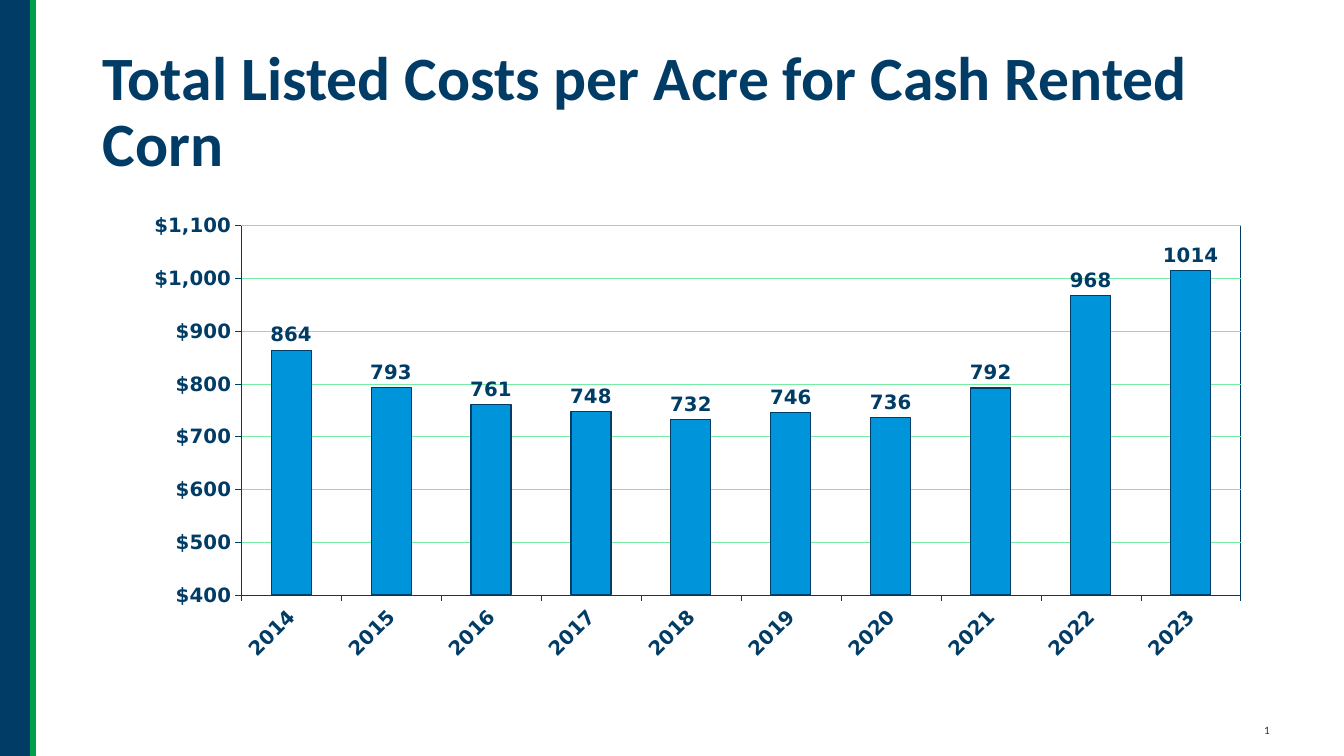
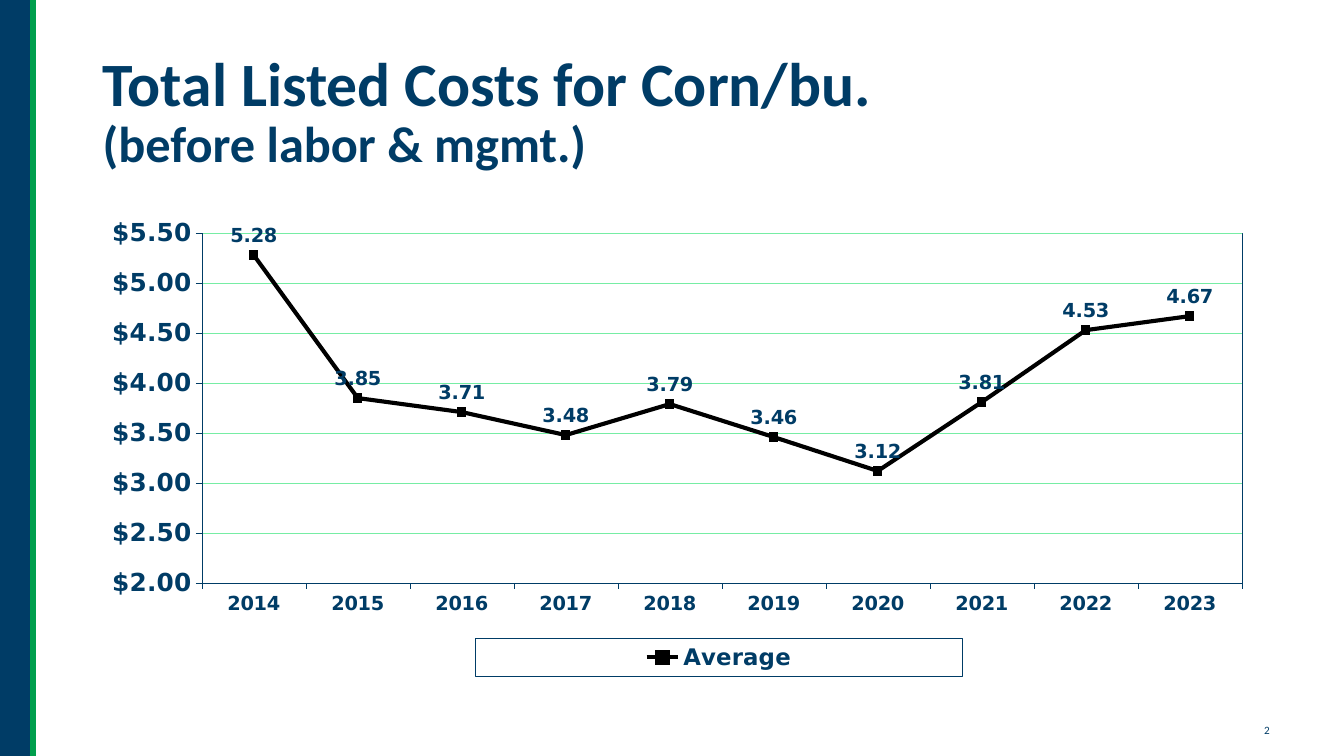
import pptx
import pptx.chart.data
import pptx.dml.color
import pptx.enum.chart
import pptx.enum.shapes
import pptx.enum.text
import pptx.oxml
import pptx.oxml.ns
import pptx.util

Inches = pptx.util.Inches
Pt = pptx.util.Pt
RGBColor = pptx.dml.color.RGBColor
ChartType = pptx.enum.chart.XL_CHART_TYPE
LabelPosition = pptx.enum.chart.XL_LABEL_POSITION
qn = pptx.oxml.ns.qn

# Shared style
NAVY = RGBColor(0x00, 0x3C, 0x66)
GREEN = RGBColor(0x00, 0x9F, 0x4D)
BLUE = RGBColor(0x00, 0x95, 0xDA)
MINT = RGBColor(0x76, 0xED, 0xA4)
BLACK = RGBColor(0, 0, 0)
TEXT_FONT = "Calibri"
CHART_FONT = "DejaVu Sans"
YEARS = [str(year) for year in range(2014, 2024)]


def format_font(font, size, name=CHART_FONT, color=NAVY, bold=True):
    font.name = name
    font.size = Pt(size)
    font.bold = bold
    font.color.rgb = color


def add_span(para, text, **style):
    span = para.add_run()
    span.text = text
    format_font(span.font, **style)
    return span


def format_line(line, color, width):
    line.color.rgb = color
    line.width = Pt(width)


def chart_xml(body):
    return pptx.oxml.parse_xml(body.replace(
        ">", f' {pptx.oxml.ns.nsdecls("c", "a")}>', 1))


def place(element, index, area, target=""):
    """Give a plot area or legend a fixed place, as fractions of the chart."""
    for old in element.findall(qn("c:layout")):
        element.remove(old)
    modes = "".join(f'<c:{side}Mode val="edge"/>' for side in "xy")
    sizes = "".join(f'<c:{side} val="{value}"/>' for side, value in zip("xywh", area))
    element.insert(index, chart_xml(
        f"<c:layout><c:manualLayout>{target}{modes}{sizes}</c:manualLayout></c:layout>"))


def outline(width):
    return chart_xml(
        f'<c:spPr><a:noFill/><a:ln w="{Pt(width)}"><a:solidFill>'
        f'<a:srgbClr val="{NAVY}"/></a:solidFill></a:ln></c:spPr>')


class Deck:
    def __init__(self):
        self.deck = pptx.Presentation()
        self.deck.slide_width = Inches(13.33)
        self.deck.slide_height = Inches(7.5)
        self.page = None

    def add_page(self, number, *title_lines):
        self.page = self.deck.slides.add_slide(self.deck.slide_layouts[6])
        self.add_band()
        self.add_title(title_lines)
        self.add_number(number)

    def add_band(self):
        band = self.page.shapes.add_shape(
            pptx.enum.shapes.MSO_SHAPE.RECTANGLE, 0, 0, Inches(0.33), Inches(7.5))
        band.shadow.inherit = False
        band.fill.solid()
        band.fill.fore_color.rgb = NAVY
        band.line.fill.background()
        edge = self.page.shapes.add_connector(
            pptx.enum.shapes.MSO_CONNECTOR.STRAIGHT,
            Inches(0.33), 0, Inches(0.33), Inches(7.5))
        format_line(edge.line, GREEN, 4.5)
        edge._element.spPr.append(pptx.oxml.parse_xml(
            f'<a:effectLst {pptx.oxml.ns.nsdecls("a")}/>'))

    def add_title(self, lines):
        box = self.page.shapes.add_textbox(
            Inches(0.92), Inches(0.4), Inches(11.5), Inches(1.45))
        box.text_frame.word_wrap = True
        box.text_frame.vertical_anchor = pptx.enum.text.MSO_ANCHOR.MIDDLE
        para = box.text_frame.paragraphs[0]
        para.line_spacing = 0.9
        for index, (text, size) in enumerate(lines):
            if index:
                para.add_line_break()
            add_span(para, text, size=size, name=TEXT_FONT)

    def add_number(self, number):
        box = self.page.shapes.add_textbox(
            Inches(12.44), Inches(7.13), Inches(0.34), Inches(0.24))
        box.text_frame.word_wrap = False
        para = box.text_frame.paragraphs[0]
        span = add_span(para, str(number), size=8, name=TEXT_FONT, bold=False)
        # Turn the run into a live slide number
        field = pptx.oxml.parse_xml(
            f'<a:fld {pptx.oxml.ns.nsdecls("a")} type="slidenum" '
            'id="{B6F15528-21DE-4FAA-801E-634DDDAF4B2B}"/>')
        span._r.addprevious(field)
        field.extend(list(span._r))
        para._p.remove(span._r)

    def add_chart(self, kind, name, values, plot_area, value_format, scale,
                  axis_size, label_size, label_position, thin):
        data = pptx.chart.data.CategoryChartData()
        data.categories = YEARS
        data.add_series(name, values)
        chart = self.page.shapes.add_chart(
            kind, Inches(0.92), Inches(2), Inches(11.5), Inches(4.76), data).chart
        chart.has_title = False
        chart.has_legend = False
        format_font(chart.font, axis_size)

        # Axes
        for axis, size in ((chart.category_axis, label_size),
                           (chart.value_axis, axis_size)):
            axis.major_tick_mark = pptx.enum.chart.XL_TICK_MARK.OUTSIDE
            axis.minor_tick_mark = pptx.enum.chart.XL_TICK_MARK.NONE
            format_font(axis.tick_labels.font, size)
            format_line(axis.format.line, NAVY, thin)
        axis = chart.value_axis
        axis.minimum_scale, axis.maximum_scale, axis.major_unit = scale
        axis.has_major_gridlines = True
        format_line(axis.major_gridlines.format.line, MINT, thin)
        axis.tick_labels.number_format = value_format
        axis.tick_labels.number_format_is_linked = False

        # Plot frame and value labels
        frame = chart._chartSpace.chart.plotArea
        place(frame, 0, plot_area, '<c:layoutTarget val="inner"/>')
        frame.append(outline(thin))
        plot = chart.plots[0]
        plot.vary_by_categories = False
        plot.has_data_labels = True
        plot.data_labels.show_value = True
        plot.data_labels.position = label_position
        format_font(plot.data_labels.font, label_size)
        return chart

    def add_legend(self, chart, area, size, thin):
        chart.has_legend = True
        legend = chart.legend
        legend.position = pptx.enum.chart.XL_LEGEND_POSITION.BOTTOM
        legend.include_in_layout = False
        format_font(legend.font, size)
        place(legend._element, 1, area)
        legend._element.find(qn("c:txPr")).addprevious(outline(thin))

    def save(self):
        self.deck.save("out.pptx")


def main():
    deck = Deck()

    # Cost per acre
    deck.add_page(7, ("Total Listed Costs per Acre for Cash Rented Corn", 44))
    chart = deck.add_chart(
        ChartType.COLUMN_CLUSTERED, "Series 1",
        [864, 793, 761, 748, 732, 746, 736, 792, 968, 1014],
        plot_area=(0.128, 0.05, 0.862, 0.77), value_format='"$"#,##0',
        scale=(400, 1100, 100), axis_size=14.1, label_size=14.1,
        label_position=LabelPosition.OUTSIDE_END, thin=0.2)
    chart.plots[0].gap_width = 150
    columns = chart.plots[0].series[0]
    columns.format.fill.solid()
    columns.format.fill.fore_color.rgb = BLUE
    format_line(columns.format.line, NAVY, 0.78)
    year_text = chart.category_axis._element.find(qn("c:txPr"))
    year_text.find(qn("a:bodyPr")).set("rot", str(-45 * 60000))

    # Cost per bushel
    deck.add_page(8, ("Total Listed Costs for Corn/bu. ", 44),
                  ("(before labor & mgmt.)", 36))
    chart = deck.add_chart(
        ChartType.LINE_MARKERS, "Average",
        [5.28, 3.85, 3.71, 3.48, 3.79, 3.46, 3.12, 3.81, 4.53, 4.67],
        plot_area=(0.094, 0.066, 0.897, 0.729), value_format='"$"#,##0.00',
        scale=(2, 5.5, 0.5), axis_size=17.7, label_size=13.8,
        label_position=LabelPosition.ABOVE, thin=0.25)
    average = chart.plots[0].series[0]
    average.smooth = False
    format_line(average.format.line, BLACK, 2.96)
    marker = average.marker
    marker.style = pptx.enum.chart.XL_MARKER_STYLE.SQUARE
    marker.size = 6
    marker.format.fill.solid()
    marker.format.fill.fore_color.rgb = BLACK
    format_line(marker.format.line, BLACK, 0.75)
    deck.add_legend(chart, (0.33, 0.91, 0.42, 0.08), size=16.3, thin=0.25)

    deck.save()


if __name__ == "__main__":
    main()
